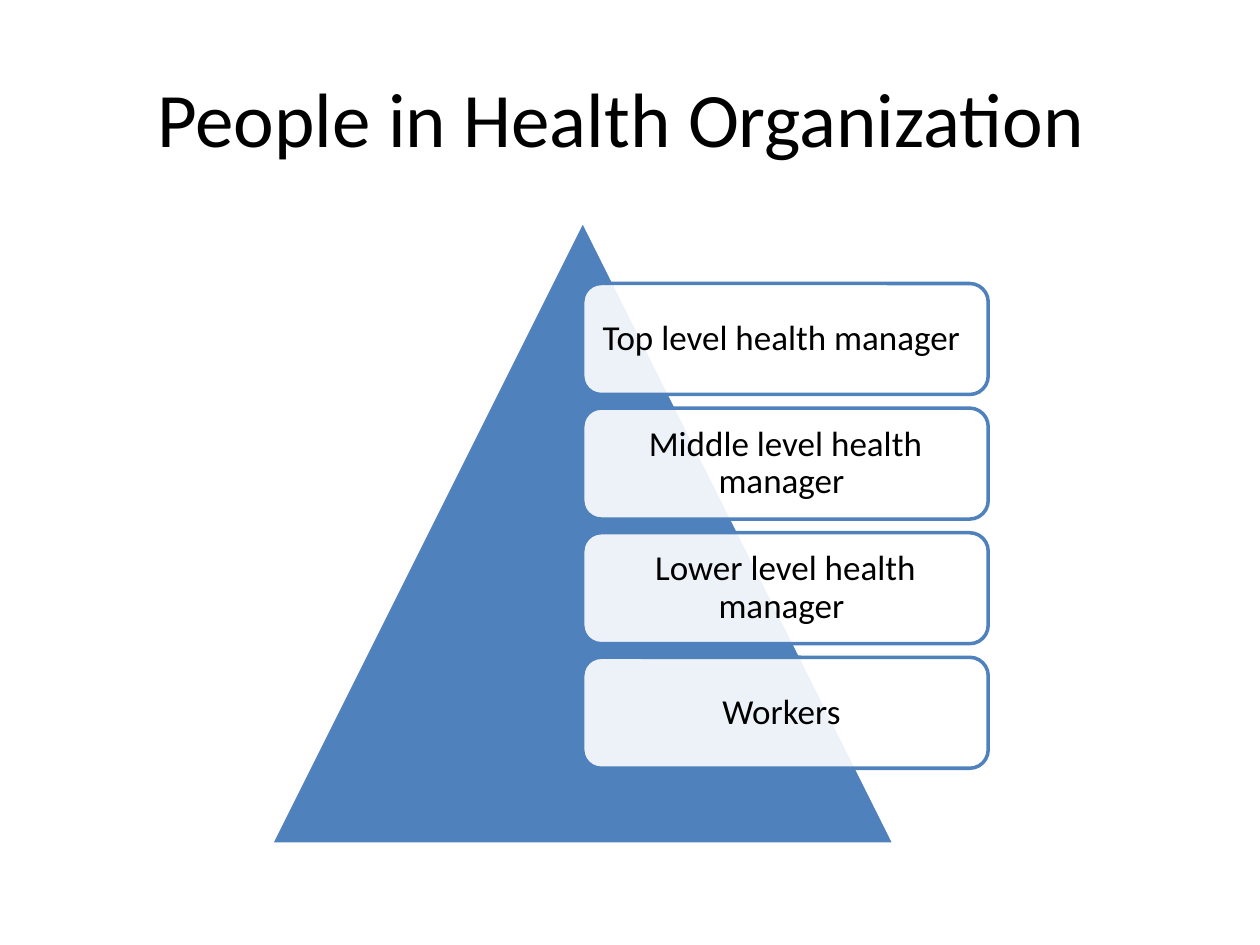
import pptx
import pptx.dml.color
import pptx.enum.shapes
import pptx.enum.text
import pptx.oxml.ns
import pptx.util
from pptx.util import Pt

LEVELS = [
    "Top level health manager ",
    "Middle level health manager ",
    "Lower level health manager ",
    "Workers ",
]


def color(value):
    return pptx.dml.color.RGBColor.from_string(value)


class PyramidSlide:
    font = "Calibri"
    ink = "000000"
    paper = "FFFFFF"
    accent = "4F81BD"
    line_width = 2

    def __init__(self, deck):
        self.page = deck.slides.add_slide(deck.slide_layouts[5])

    def set_text(self, shape, text, size):
        frame = shape.text_frame
        frame.word_wrap = True
        frame.vertical_anchor = pptx.enum.text.MSO_ANCHOR.MIDDLE
        para = frame.paragraphs[0]
        para.text = text
        para.alignment = pptx.enum.text.PP_ALIGN.CENTER
        para.font.name = self.font
        para.font.size = Pt(size)
        para.font.color.rgb = color(self.ink)
        return para

    def title(self, text, left, top, width, height):
        box = self.page.shapes.title
        box.left, box.top = Pt(left), Pt(top)
        box.width, box.height = Pt(width), Pt(height)
        self.set_text(box, text, 44)

    def shape(self, kind, left, top, width, height, fill, line):
        shape = self.page.shapes.add_shape(
            kind, Pt(left), Pt(top), Pt(width), Pt(height))
        shape.shadow.inherit = False
        shape.fill.solid()
        shape.fill.fore_color.rgb = color(fill)
        shape.line.color.rgb = color(line)
        shape.line.width = Pt(self.line_width)
        return shape

    def pyramid(self, left, top, size):
        kind = pptx.enum.shapes.MSO_SHAPE.ISOSCELES_TRIANGLE
        self.shape(kind, left, top, size, size, self.accent, self.paper)

    def level(self, text, left, top, width, height):
        kind = pptx.enum.shapes.MSO_SHAPE.ROUNDED_RECTANGLE
        box = self.shape(kind, left, top, width, height, self.paper, self.accent)
        fill = box.element.spPr.find(pptx.oxml.ns.qn("a:solidFill"))
        tint = fill.find(pptx.oxml.ns.qn("a:srgbClr"))
        alpha = tint.makeelement(pptx.oxml.ns.qn("a:alpha"), {"val": "90000"})
        tint.append(alpha)
        frame = box.text_frame
        frame.margin_left = frame.margin_right = Pt(6)
        frame.margin_top = frame.margin_bottom = Pt(6)
        self.set_text(box, text, 20).line_spacing = 0.9


def main():
    deck = pptx.Presentation()
    deck.slide_width, deck.slide_height = Pt(720), Pt(540)
    slide = PyramidSlide(deck)
    slide.title("People in Health Organization ", 36, 21.6, 648, 90)
    slide.pyramid(154.8, 126, 356.4)
    for index, text in enumerate(LEVELS):
        slide.level(text, 333, 162 + index * 71.2, 231.7, 63.4)
    deck.save("out.pptx")


if __name__ == "__main__":
    main()
